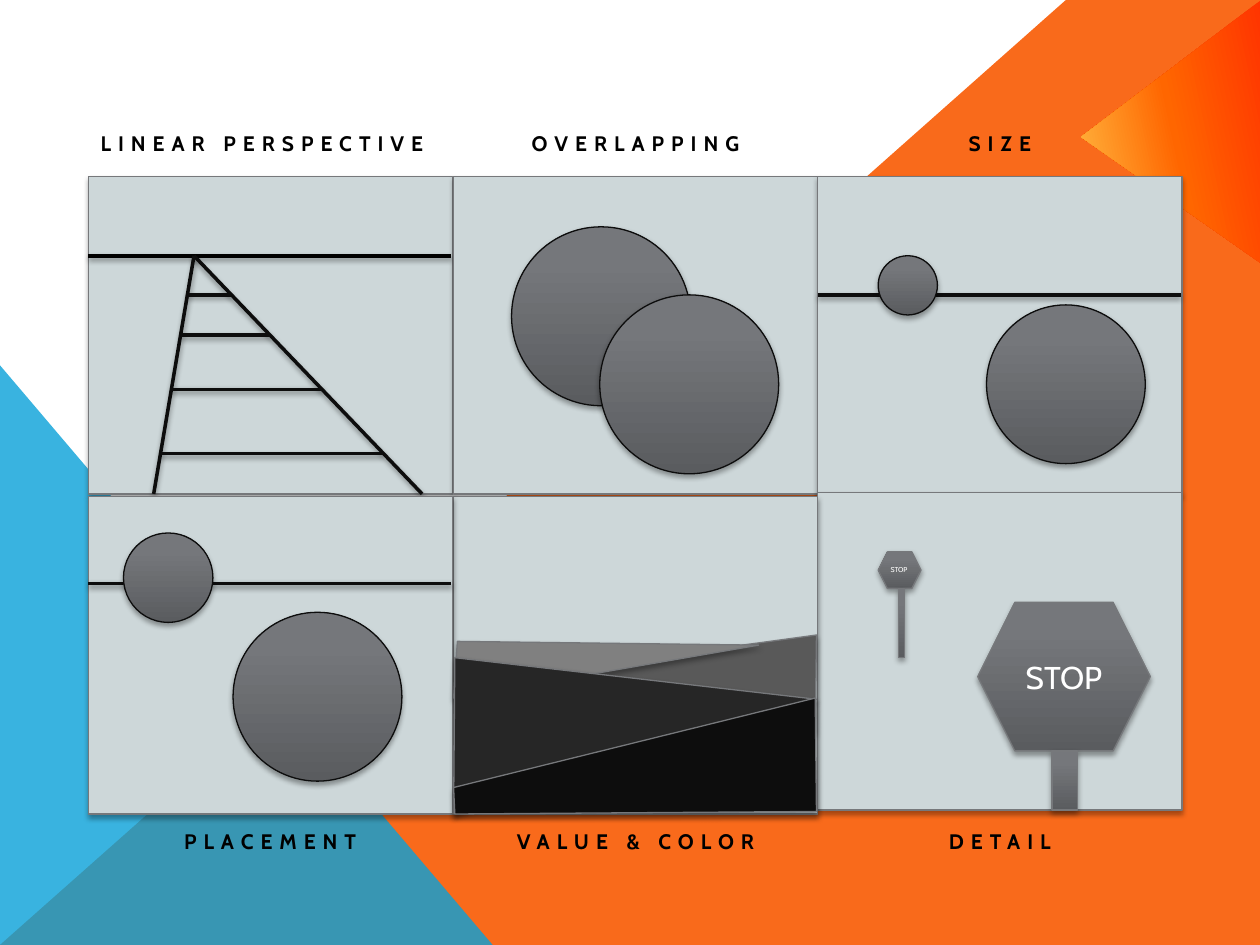
import lxml.etree
import pptx
import pptx.dml.color
import pptx.enum.shapes
import pptx.enum.text
import pptx.oxml
import pptx.oxml.ns
import pptx.util

Inches = pptx.util.Inches
RGBColor = pptx.dml.color.RGBColor
Shape = pptx.enum.shapes.MSO_SHAPE
Align = pptx.enum.text.PP_ALIGN

ORANGE = RGBColor(0xF9, 0x6A, 0x1B)
BLUE = RGBColor(0x08, 0xA1, 0xD9)
PANEL = RGBColor(0xCD, 0xD7, 0xD9)
EDGE = RGBColor(0x76, 0x78, 0x7B)
BLACK = RGBColor(0, 0, 0)
INK = RGBColor(0x0D, 0x0D, 0x0D)
WHITE = RGBColor(0xFF, 0xFF, 0xFF)
FAR_HILL = RGBColor(0x80, 0x80, 0x80)
MIDDLE_HILL = RGBColor(0x59, 0x59, 0x59)
NEAR_HILL = RGBColor(0x26, 0x26, 0x26)
FLAME = [(0, RGBColor(0xFF, 0x34, 0)), (49, RGBColor(0xFF, 0x66, 0)),
         (100, RGBColor(0xFF, 0xBE, 0x45))]
STEEL = [(0, RGBColor(0x5A, 0x5C, 0x5F)), (80, RGBColor(0x75, 0x77, 0x7B)),
         (100, RGBColor(0x75, 0x78, 0x7C))]

COLUMNS = [0.7, 3.6, 6.49]
PANEL_WIDTH, PANEL_HEIGHT = 2.89, 2.52
TOP_ROW, BOTTOM_ROW, DETAIL_ROW = 1.4, 3.94, 3.91
HORIZON, PANEL_BOTTOM = 2.03, 3.92
VANISHING_X, LEFT_FOOT, RIGHT_FOOT = 1.54, 1.22, 3.35


def add_shadow(item, opacity=35, distance=1.8):
    """Give a shape or connector a soft shadow that falls straight down."""
    namespace = pptx.oxml.ns.nsdecls("a")
    item._element.spPr.append(pptx.oxml.parse_xml(
        f'<a:effectLst {namespace}><a:outerShdw blurRad="{pptx.util.Pt(3.1)}" '
        f'dist="{pptx.util.Pt(distance)}" dir="5400000" rotWithShape="0">'
        f'<a:srgbClr val="{BLACK}"><a:alpha val="{opacity * 1000}"/></a:srgbClr>'
        '</a:outerShdw></a:effectLst>'))


def fill_gradient(shape, stops, angle):
    """Fill a shape with a linear gradient whose angle runs clockwise."""
    shape.fill.gradient()
    shape.fill.gradient_angle = 360 - angle
    stop_list = shape._element.spPr.find(".//" + pptx.oxml.ns.qn("a:gsLst"))
    for stop in list(stop_list):
        stop_list.remove(stop)
    for position, color in stops:
        stop = lxml.etree.SubElement(
            stop_list, pptx.oxml.ns.qn("a:gs"), pos=str(position * 1000))
        lxml.etree.SubElement(stop, pptx.oxml.ns.qn("a:srgbClr"), val=str(color))


def style_shape(shape, fill, line=None, angle=270):
    """Set fill and outline; outlined shapes also get a shadow."""
    if isinstance(fill, list):
        fill_gradient(shape, fill, angle)
    else:
        shape.fill.solid()
        shape.fill.fore_color.rgb = fill
    if line is None:
        shape.line.fill.background()
        shape.shadow.inherit = False
    else:
        shape.line.color.rgb = line
        shape.line.width = pptx.util.Pt(0.75)
        add_shadow(shape)


def add_preset(shapes, kind, left, top, width, height, fill, line=None, angle=270):
    """Add a styled preset shape."""
    shape = shapes.add_shape(
        kind, Inches(left), Inches(top), Inches(width), Inches(height))
    style_shape(shape, fill, line, angle)
    return shape


def add_outline(shapes, points, fill, line=None):
    """Add a closed polygon through the points."""
    corners = [(Inches(x), Inches(y)) for x, y in points]
    builder = shapes.build_freeform(*corners[0], scale=1.0)
    builder.add_line_segments(corners[1:], close=True)
    style_shape(builder.convert_to_shape(), fill, line)


def add_line(shapes, start, end, color=INK):
    """Add a thick straight line with a shadow."""
    line = shapes.add_connector(
        pptx.enum.shapes.MSO_CONNECTOR.STRAIGHT,
        *(Inches(value) for value in (*start, *end)))
    line.line.color.rgb = color
    line.line.width = pptx.util.Pt(2)
    add_shadow(line, opacity=38, distance=1.6)


def write_text(shape, text, size, color, align=Align.CENTER, bold=False,
               before=0, spacing=0):
    """Write one formatted paragraph into a shape."""
    para = shape.text_frame.paragraphs[0]
    para.alignment = align
    para.space_before = pptx.util.Pt(before)
    span = para.add_run()
    span.text = text
    span.font.name = "Cabin"
    span.font.size = pptx.util.Pt(size)
    span.font.bold = bold
    span.font.color.rgb = color
    if spacing:
        span._r.get_or_add_rPr().set("spc", str(spacing * 100))


def add_text_box(shapes, text, left, top, width, height, **text_format):
    """Add a wrapping text box."""
    box = shapes.add_textbox(Inches(left), Inches(top), Inches(width), Inches(height))
    box.text_frame.word_wrap = True
    write_text(box, text, **text_format)


def add_disc(shapes, left, top, diameter):
    """Add a shaded disc."""
    add_preset(shapes, Shape.OVAL, left, top, diameter, diameter, STEEL, INK)


def add_panel(shapes, column, top):
    """Add one empty panel of the grid."""
    add_preset(shapes, Shape.RECTANGLE, COLUMNS[column], top,
               PANEL_WIDTH, PANEL_HEIGHT, PANEL, EDGE)


def add_sign(shapes, head, post):
    """Add a grouped stop sign and return its group and head."""
    group = shapes.add_group_shape()
    plate = add_preset(group.shapes, Shape.HEXAGON, *head, STEEL, EDGE)
    add_preset(group.shapes, Shape.RECTANGLE, *post, STEEL, EDGE)
    return group, plate


def draw_backdrop(shapes):
    """Draw the coloured corners behind the panels."""
    add_outline(shapes, [(0, 7.5), (8.46, 0), (10, 0), (10, 7.5)], ORANGE)
    corner = add_preset(shapes, Shape.RIGHT_TRIANGLE, 0, 2.9, 3.91, 4.6, BLUE)
    color = corner._element.spPr.find(".//" + pptx.oxml.ns.qn("a:srgbClr"))
    lxml.etree.SubElement(color, pptx.oxml.ns.qn("a:alpha"), val="80000")
    flame = add_preset(shapes, Shape.ISOSCELES_TRIANGLE, 8.25, 0.33, 2.09, 1.43,
                       FLAME, angle=258)
    flame.adjustments[0] = 0.48
    flame.rotation = 270


def draw_perspective(shapes):
    """Draw a track whose rungs end on its two converging rails."""
    vanishing_point = (VANISHING_X, HORIZON)
    add_line(shapes, (COLUMNS[0], HORIZON), (3.58, HORIZON), BLACK)
    for foot in (RIGHT_FOOT, LEFT_FOOT):
        add_line(shapes, vanishing_point, (foot, PANEL_BOTTOM))
    for y in (2.34, 2.66, 3.09, 3.6):
        share = (y - HORIZON) / (PANEL_BOTTOM - HORIZON)
        left, right = (VANISHING_X + share * (foot - VANISHING_X)
                       for foot in (LEFT_FOOT, RIGHT_FOOT))
        add_line(shapes, (left, y), (right, y))


def draw_discs(shapes):
    """Draw the overlapping, size and placement examples."""
    for left, top, diameter in ((4.06, 1.8, 1.42), (4.76, 2.34, 1.42),
                                (7.83, 2.42, 1.26), (1.85, 4.86, 1.34)):
        add_disc(shapes, left, top, diameter)
    add_line(shapes, (6.49, 2.34), (9.37, 2.34))
    add_disc(shapes, 6.97, 2.03, 0.47)
    add_line(shapes, (0.7, 4.63), (3.58, 4.63))
    add_disc(shapes, 0.98, 4.23, 0.71)


def draw_hills(shapes):
    """Draw the hills that darken towards the viewer."""
    hills = [(MIDDLE_HILL, [(6.47, 5.81), (4.06, 5.37), (6.48, 5.04)]),
             (FAR_HILL, [(3.6, 5.54), (3.63, 5.09), (6.02, 5.12)]),
             (NEAR_HILL, [(6.48, 5.55), (3.6, 6.46), (3.61, 5.22)]),
             (INK, [(6.47, 5.54), (3.6, 6.25), (3.61, 6.46), (6.48, 6.44)])]
    for color, points in hills:
        add_outline(shapes, points, color, EDGE)


def draw_signs(shapes):
    """Draw the near and far stop signs."""
    plate = add_sign(shapes, (7.76, 4.78, 1.37, 1.18), (8.35, 5.96, 0.2, 0.47))[1]
    write_text(plate, "STOP", size=18, color=WHITE)
    group = add_sign(shapes, (6.97, 4.38, 0.34, 0.29), (7.13, 4.67, 0.05, 0.55))[0]
    add_text_box(group.shapes, "STOP", 6.94, 4.44, 0.39, 0.17, size=4, color=WHITE)


def draw_labels(shapes):
    """Write the six panel titles."""
    rows = [(0.99, ["LINEAR PERSPECTIVE", "OVERLAPPING", "SIZE"]),
            (6.53, ["PLACEMENT", "VALUE & COLOR", "DETAIL"])]
    for top, titles in rows:
        for left, title in zip(COLUMNS, titles):
            align = Align.LEFT if title == "LINEAR PERSPECTIVE" else Align.CENTER
            add_text_box(shapes, title, left, top, PANEL_WIDTH, 0.3, size=12,
                         color=BLACK, align=align, bold=True, before=8, spacing=4)


def main():
    """Build the slide of depth techniques."""
    deck = pptx.Presentation()
    deck.slide_width, deck.slide_height = Inches(10), Inches(7.5)
    shapes = deck.slides.add_slide(deck.slide_layouts[6]).shapes
    draw_backdrop(shapes)
    add_panel(shapes, 0, TOP_ROW)
    draw_perspective(shapes)
    for column, top in ((1, TOP_ROW), (2, TOP_ROW), (2, DETAIL_ROW),
                        (1, BOTTOM_ROW), (0, BOTTOM_ROW)):
        add_panel(shapes, column, top)
    for draw in (draw_discs, draw_hills, draw_signs, draw_labels):
        draw(shapes)
    deck.save("out.pptx")


if __name__ == "__main__":
    main()
